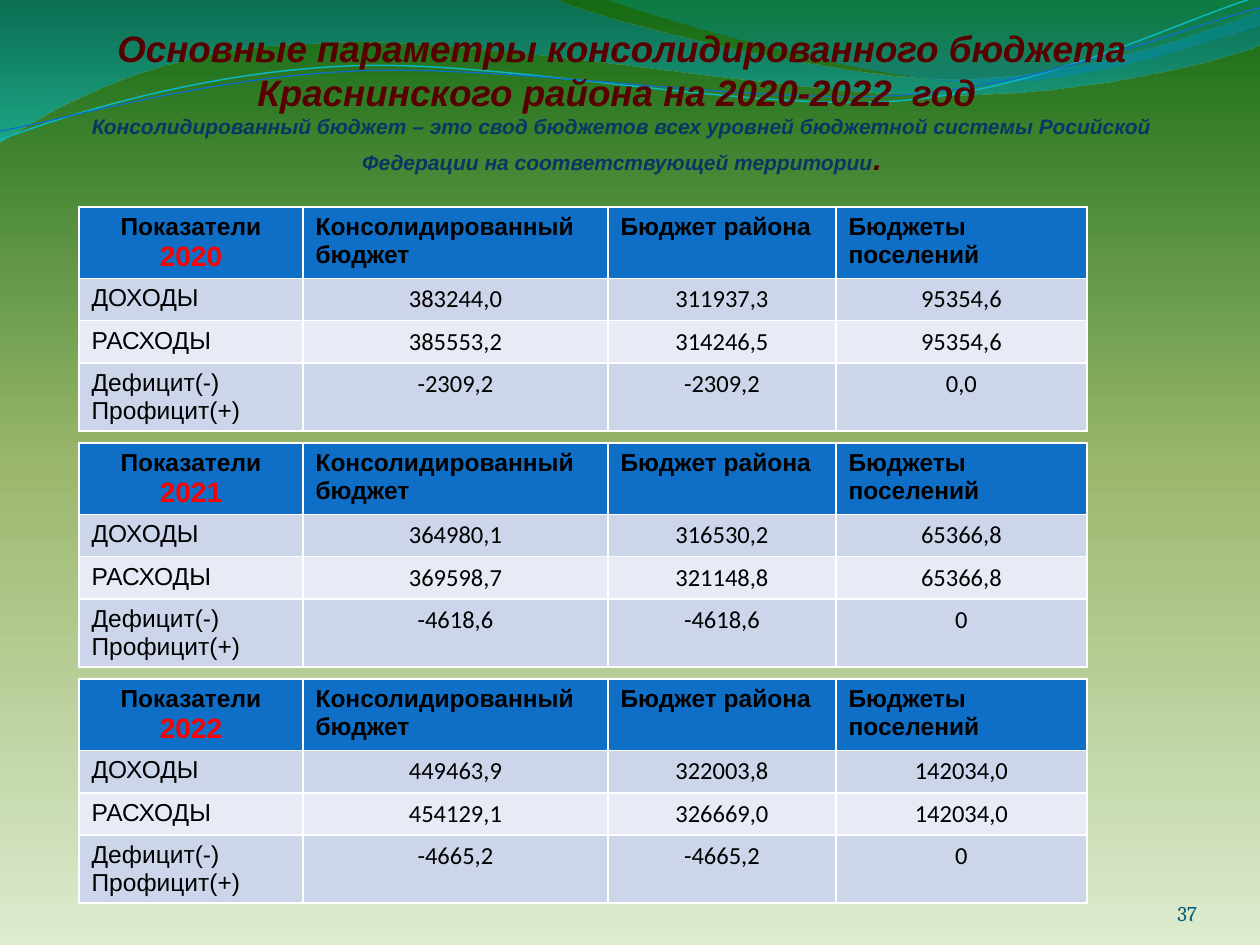
from math import cos, radians, sin

from lxml.etree import Element, SubElement
from pptx import Presentation
from pptx.dml.color import RGBColor
from pptx.enum.text import MSO_ANCHOR, MSO_AUTO_SIZE, PP_ALIGN
from pptx.oxml.ns import qn
from pptx.util import Pt

EMU_PER_PX = 914400 / 126
COLUMN_WIDTHS = [224, 305, 228, 251]
ROW_HEIGHTS = [47, 32, 32, 50]
TABLE_LEFT, TABLE_TOP, TABLE_HEIGHT, TABLE_STEP = 79, 207, 231, 236
BAND_FILLS = ["0F6FC6", "CCD5EA", "E7EBF5", "CCD5EA"]
HEADINGS = ["Консолидированный  бюджет", "Бюджет района", "Бюджеты поселений"]
ROW_LABELS = ["ДОХОДЫ", "РАСХОДЫ", "Дефицит(-)\nПрофицит(+)"]
BUDGETS = {
    "2020": [["383244,0", "311937,3", "95354,6"],
             ["385553,2", "314246,5", "95354,6"],
             ["-2309,2", "-2309,2", "0,0"]],
    "2021": [["364980,1", "316530,2", "65366,8"],
             ["369598,7", "321148,8", "65366,8"],
             ["-4618,6", "-4618,6", "0"]],
    "2022": [["449463,9", "322003,8", "142034,0"],
             ["454129,1", "326669,0", "142034,0"],
             ["-4665,2", "-4665,2", "0"]],
}
TITLE_LINES = [
    "Основные параметры консолидированного бюджета",
    "Краснинского района на 2020-2022  год ",
    "Консолидированный бюджет – это свод бюджетов всех уровней бюджетной системы "
    "Росийской Федерации на соответствующей территории",
]
WIDE_WAVE = [(0, -1), (554, -1), (600, 21, 837, 79, 955, 79),
             (1075, 79, 1207, 33, 1260, 11), (1261, 45),
             (1239, 55, 1096, 96, 940, 95), (784, 95, 481, 35, 324, 43),
             (163, 44, 58, 105, -1, 142), (0, -1)]
RIGHT_WAVE = [(604, -1), (641, 14, 859, 78, 969, 82),
              (1079, 87, 1211, 40, 1260, 26), (1260, 0), (604, -1)]
CYAN_LINE = [(0, 140), (60, 117, 199, 72, 349, 66),
             (498, 59, 747, 112, 898, 101), (1050, 89, 1182, 19, 1257, -3)]
BLUE_LINE = [(0, 131), (59, 121, 207, 77, 357, 71),
             (508, 64, 752, 105, 903, 95), (1053, 84, 1186, 26, 1260, 8)]
CURVE_TILT = -2.7
CURVE_CENTER = (629, 73)


def px(length):
    """Turn a length in px into EMU."""
    return round(length * EMU_PER_PX)


def color(value):
    """Turn a hex string into a colour."""
    return RGBColor.from_string(value)


def fill_gradient(fill, element, stops, angle):
    """Fill with (position, colour, opacity) stops, all in percent."""
    fill.gradient()
    fill.gradient_angle = angle
    stop_list = element.find(".//" + qn("a:gsLst"))
    for stop in list(stop_list):
        stop_list.remove(stop)
    for position, value, opacity in stops:
        stop = SubElement(stop_list, qn("a:gs"), pos=str(position * 1000))
        tint = SubElement(stop, qn("a:srgbClr"), val=value)
        if opacity < 100:
            SubElement(tint, qn("a:alpha"), val=str(opacity * 1000))


def turn(point, angle):
    """Turn a point clockwise about the centre of the curves."""
    x, y = (value - middle for value, middle in zip(point, CURVE_CENTER))
    cosine, sine = cos(radians(angle)), sin(radians(angle))
    return (CURVE_CENTER[0] + x * cosine - y * sine,
            CURVE_CENTER[1] + x * sine + y * cosine)


def add_outline(slide, segments, closed, tilt=0):
    """Add a freeform of straight and cubic segments."""
    points = [turn(pair, -tilt) for segment in segments
              for pair in zip(segment[::2], segment[1::2])]
    points = [(px(x), px(y)) for x, y in points]
    builder = slide.shapes.build_freeform(*points[0])
    builder.add_line_segments(points[1:], close=closed)
    shape = builder.convert_to_shape()
    shape.shadow.inherit = False
    shape.rotation = tilt
    bend(shape, segments[1:])
    return shape


def bend(shape, segments):
    """Join each three lines of a cubic segment into one curve."""
    lines = iter(shape.element.findall(".//" + qn("a:lnTo")))
    for segment in segments:
        parts = [next(lines) for _ in segment[::2]]
        if len(parts) == 3:
            curve = Element(qn("a:cubicBezTo"))
            parts[0].addprevious(curve)
            for part in parts:
                curve.append(part[0])
                part.getparent().remove(part)


def add_wave(slide, segments, stops):
    """Add a translucent wave without an outline."""
    shape = add_outline(slide, segments, True)
    shape.line.fill.background()
    fill_gradient(shape.fill, shape.element, stops, 270)


def add_curve(slide, segments, value, width):
    """Add a thin open curve."""
    shape = add_outline(slide, segments, False, CURVE_TILT)
    shape.fill.background()
    shape.line.color.rgb = color(value)
    shape.line.width = Pt(width)


def format_run(run, size, value, font="Arial", bold=False, italic=False):
    """Set the look of one run."""
    run.font.name = font
    run.font.size = Pt(size)
    run.font.bold = bold
    run.font.italic = italic
    run.font.color.rgb = color(value)


def prepare_frame(text_frame, top_margin):
    """Set up a wrapped, bottom-anchored text frame."""
    text_frame.word_wrap = True
    text_frame.auto_size = MSO_AUTO_SIZE.NONE
    text_frame.vertical_anchor = MSO_ANCHOR.BOTTOM
    text_frame.margin_left = text_frame.margin_right = text_frame.margin_bottom = 0
    text_frame.margin_top = px(top_margin)


def set_title(slide):
    """Fill the title and bring it in front of the waves."""
    title = slide.shapes.title
    title.element.getparent().append(title.element)
    title.left, title.top, title.width, title.height = px(79), 0, px(1086), px(177)
    text_frame = title.text_frame
    prepare_frame(text_frame, 6)
    text_frame.text = "\n".join(TITLE_LINES)
    styles = [(21, "580000"), (21, "580000"), (12, "083763")]
    for paragraph, style in zip(text_frame.paragraphs, styles):
        paragraph.alignment = PP_ALIGN.CENTER
        format_run(paragraph.runs[0], *style, bold=True, italic=True)
    period = text_frame.paragraphs[-1].add_run()
    period.text = "."
    format_run(period, 18, "580000", bold=True, italic=True)


def add_budget_table(slide, top, year, values):
    """Add the budget table of one year."""
    rows = [["Показатели\n" + year] + HEADINGS]
    rows += [[label] + numbers for label, numbers in zip(ROW_LABELS, values)]
    frame = slide.shapes.add_table(
        len(rows), len(COLUMN_WIDTHS), px(TABLE_LEFT), px(top),
        px(sum(COLUMN_WIDTHS)), px(TABLE_HEIGHT))
    table = frame.table
    for column, width in zip(table.columns, COLUMN_WIDTHS):
        column.width = px(width)
    for i, texts in enumerate(rows):
        table.rows[i].height = px(ROW_HEIGHTS[i])
        is_header = i == 0
        for j, text in enumerate(texts):
            cell = table.cell(i, j)
            cell.text_frame.text = text
            cell.fill.solid()
            cell.fill.fore_color.rgb = color(BAND_FILLS[i])
            is_centered = is_header == (j == 0)
            font = "Arial" if is_header or j == 0 else "Calibri"
            for paragraph in cell.text_frame.paragraphs:
                paragraph.alignment = PP_ALIGN.CENTER if is_centered else PP_ALIGN.LEFT
                format_run(paragraph.runs[0], 14, "000000", font, bold=is_header)
    format_run(table.cell(0, 0).text_frame.paragraphs[1].runs[0], 16, "FF0000", bold=True)
    frame.height = px(TABLE_HEIGHT)


def add_page_number(slide, number):
    """Add the page number at the lower right."""
    text_frame = slide.shapes.add_textbox(px(1092), px(876), px(105), px(50)).text_frame
    prepare_frame(text_frame, 0)
    text_frame.text = number
    text_frame.paragraphs[0].alignment = PP_ALIGN.RIGHT
    format_run(text_frame.paragraphs[0].runs[0], 12, "045D75", "Cambria")


def main():
    """Build and save the slide."""
    presentation = Presentation()
    presentation.slide_width, presentation.slide_height = px(1260), px(945)
    slide = presentation.slides.add_slide(presentation.slide_layouts[5])
    fill_gradient(slide.background.fill, slide.element,
                  [(0, "DDEBCF", 100), (50, "9CB86E", 100), (100, "156B13", 100)], 90)
    add_wave(slide, WIDE_WAVE, [(0, "0074A1", 45), (100, "00C6CF", 55)])
    add_wave(slide, RIGHT_WAVE, [(0, "00A1A9", 30), (80, "008BBF", 45)])
    add_curve(slide, CYAN_LINE, "0AB8BF", 0.85)
    add_curve(slide, BLUE_LINE, "0F6FC6", 0.75)
    set_title(slide)
    for index, (year, values) in enumerate(BUDGETS.items()):
        add_budget_table(slide, TABLE_TOP + index * TABLE_STEP, year, values)
    add_page_number(slide, "37")
    presentation.save("out.pptx")


if __name__ == "__main__":
    main()
